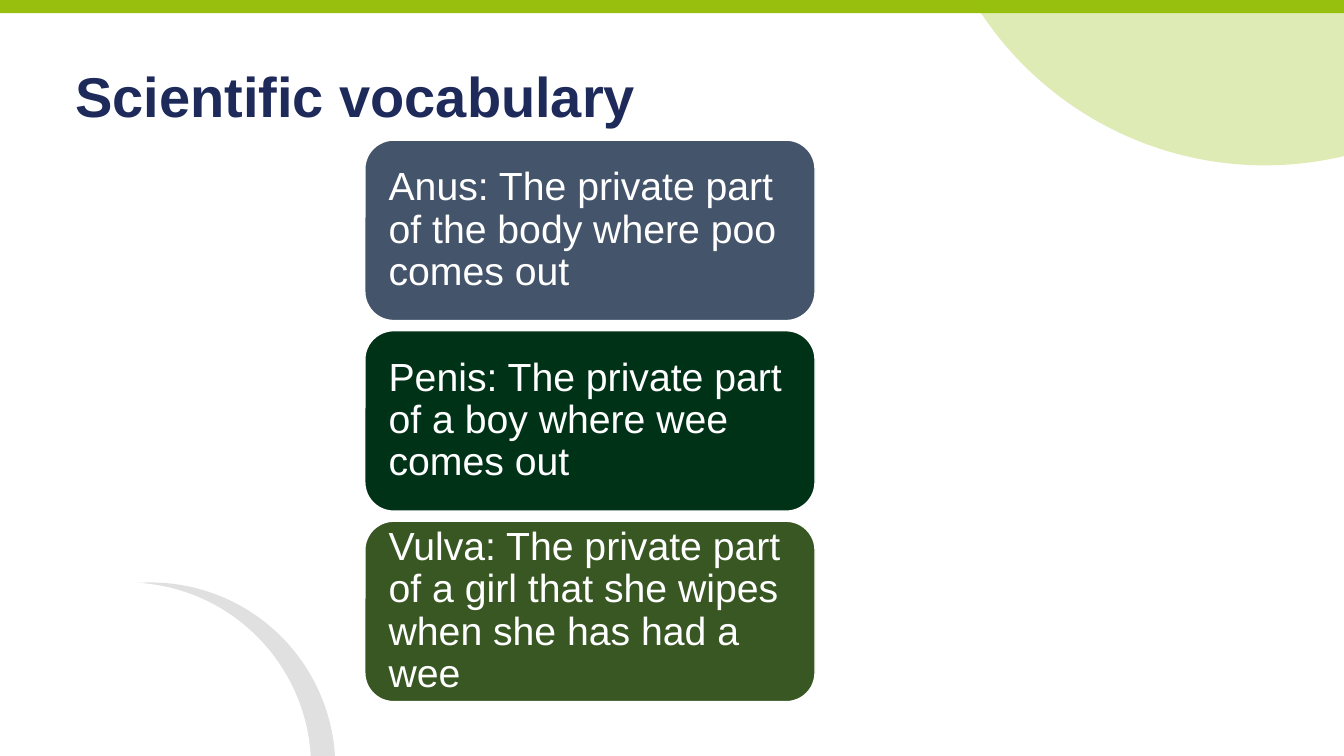
from lxml import etree
from pptx import Presentation
from pptx.dml.color import RGBColor
from pptx.enum.shapes import MSO_SHAPE
from pptx.enum.text import MSO_ANCHOR, PP_ALIGN
from pptx.oxml.ns import qn
from pptx.util import Pt

WHITE = RGBColor(0xFF, 0xFF, 0xFF)
BLACK = RGBColor(0x00, 0x00, 0x00)
LIME = RGBColor(0x98, 0xBF, 0x0E)
LIME_CIRCLE = RGBColor(0x97, 0xBF, 0x0D)
NAVY = RGBColor(0x1D, 0x2A, 0x5A)
SLATE = RGBColor(0x44, 0x54, 0x6A)
DARK_GREEN = RGBColor(0x00, 0x32, 0x17)
OLIVE = RGBColor(0x38, 0x57, 0x23)

SLIDE_WIDTH, SLIDE_HEIGHT = 960, 540
CARD_LEFT, CARD_TOP = 260.6, 100.1
CARD_WIDTH, CARD_HEIGHT, CARD_PITCH = 321.6, 128.9, 136.1

TITLE_FONT = {"name": "Arial", "size": Pt(40), "bold": True}
CARD_FONT = {"name": "Arial", "size": Pt(28), "bold": False}

CARDS = [
    ("Anus: The private part of the body where poo comes out", SLATE),
    ("Penis: The private part of a boy where wee comes out", DARK_GREEN),
    ("Vulva: The private part of a girl that she wipes when she has had a wee", OLIVE),
]


def add_filled_shape(slide, kind, left, top, width, height, color, opacity=100):
    shape = slide.shapes.add_shape(kind, Pt(left), Pt(top), Pt(width), Pt(height))
    shape.shadow.inherit = False
    shape.fill.solid()
    shape.fill.fore_color.rgb = color
    shape.line.fill.background()
    if opacity < 100:
        color_element = shape.fill._xPr.find(qn("a:solidFill"))[0]
        etree.SubElement(color_element, qn("a:alpha"), val=str(opacity * 1000))
    return shape


def write_text(shape, text, font_format, color, frame_format):
    frame = shape.text_frame
    for name, value in frame_format.items():
        setattr(frame, name, value)
    paragraph = frame.paragraphs[0]
    paragraph.text = text
    paragraph.alignment = PP_ALIGN.LEFT
    paragraph.line_spacing = 0.9
    for name, value in font_format.items():
        setattr(paragraph.font, name, value)
    paragraph.font.color.rgb = color


def add_title(slide, text):
    title = slide.shapes.add_textbox(Pt(46.8), Pt(46.1), Pt(812.2), Pt(78.5))
    write_text(title, text, TITLE_FONT, NAVY,
               {"word_wrap": True, "vertical_anchor": MSO_ANCHOR.TOP})


def add_card(slide, index, text, color):
    card = add_filled_shape(slide, MSO_SHAPE.ROUNDED_RECTANGLE, CARD_LEFT,
                            CARD_TOP + index * CARD_PITCH, CARD_WIDTH, CARD_HEIGHT, color)
    card.adjustments[0] = 0.16
    card.line.color.rgb = WHITE
    card.line.width = Pt(1)
    write_text(card, text, CARD_FONT, WHITE, {
        "word_wrap": True, "vertical_anchor": MSO_ANCHOR.MIDDLE,
        "margin_left": Pt(11), "margin_right": Pt(11),
        "margin_top": 0, "margin_bottom": 0})


def main():
    presentation = Presentation()
    presentation.slide_width = Pt(SLIDE_WIDTH)
    presentation.slide_height = Pt(SLIDE_HEIGHT)
    slide = presentation.slides.add_slide(presentation.slide_layouts[6])

    # Grey crescent: a white circle over a shaded one
    for left, color, opacity in ((-24.5, BLACK, 12), (-41.8, WHITE, 100)):
        add_filled_shape(slide, MSO_SHAPE.OVAL, left, 416, 264, 264, color, opacity)

    # Top band and corner circle
    add_filled_shape(slide, MSO_SHAPE.RECTANGLE, 0, 0, SLIDE_WIDTH, 9.4, LIME)
    add_filled_shape(slide, MSO_SHAPE.OVAL, 660.2, -368.6, 486.7, 486.7, LIME_CIRCLE, 30)

    # Title and vocabulary cards
    add_title(slide, "Scientific vocabulary")
    for index, (text, color) in enumerate(CARDS):
        add_card(slide, index, text, color)

    presentation.save("out.pptx")


if __name__ == "__main__":
    main()
